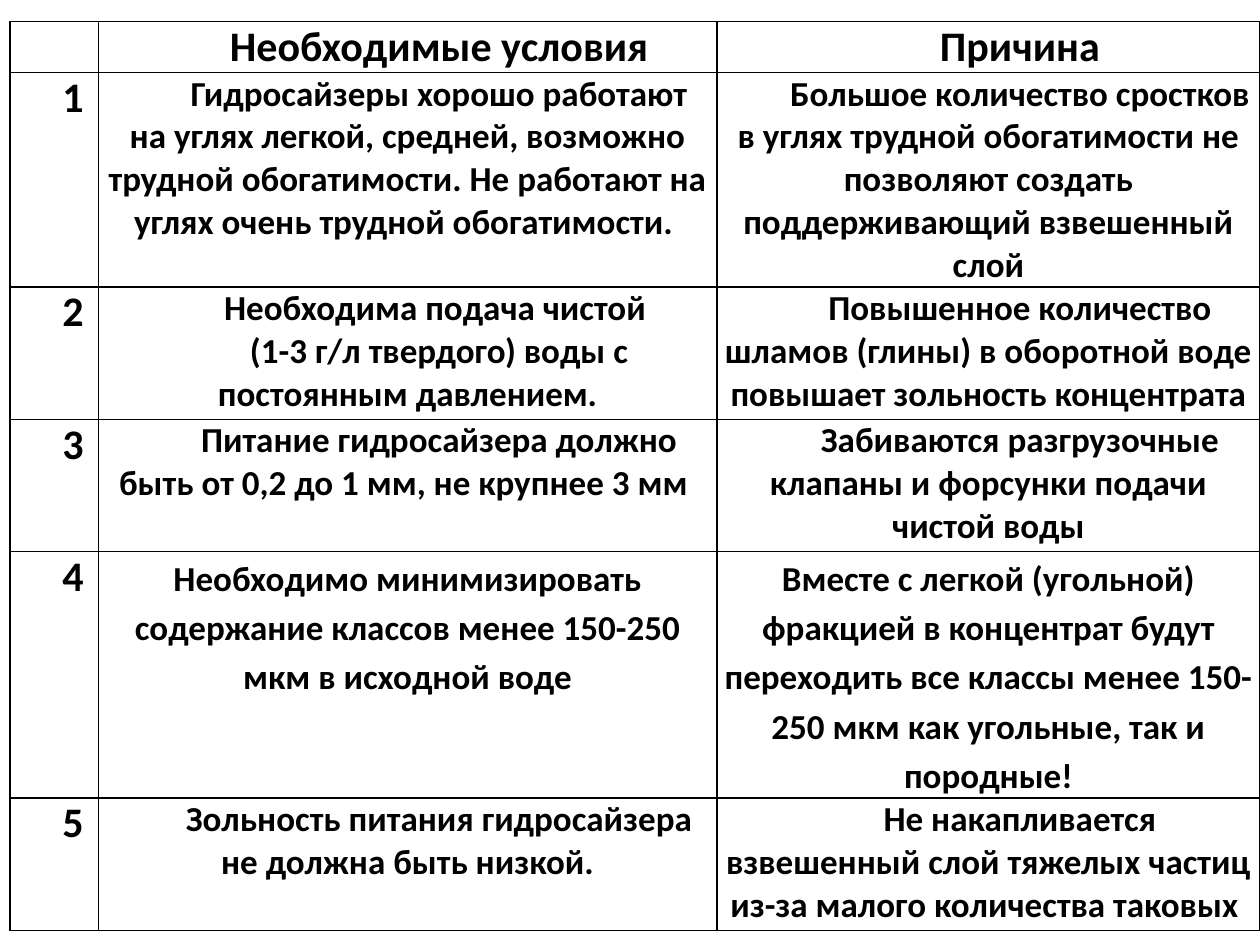
from lxml import etree
from pptx import Presentation
from pptx.dml.color import RGBColor
from pptx.enum.text import PP_ALIGN
from pptx.oxml.ns import qn
from pptx.util import Inches, Pt

CENTER = PP_ALIGN.CENTER
BLACK = RGBColor(0x00, 0x00, 0x00)
FONT = "Calibri"
LARGE, NORMAL = 24, 20
FIRST_LINE = 0.5
BORDER_WIDTH = 1
LEFT, TOP = 0.08, 0.17
COLUMN_WIDTHS = [0.7, 4.91, 4.31]
ROW_HEIGHTS = [0.27, 1.57, 1.05, 1.05, 1.51, 1.05]
TEXT_MARGINS = (0.06, 0.06)
NUMBER_MARGINS = (0, 0.39)
HEADINGS = ["", "Необходимые условия", "Причина"]
CONDITIONS = [
    ("Гидросайзеры хорошо работают на углях легкой, средней, возможно трудной "
     "обогатимости. Не работают на углях очень трудной обогатимости. ",
     "Большое количество сростков в углях трудной обогатимости не позволяют "
     "создать поддерживающий взвешенный слой"),
    ("Необходима подача чистой \n(1-3 г/л твердого) воды с постоянным давлением.",
     "Повышенное количество шламов (глины) в оборотной воде повышает зольность "
     "концентрата"),
    ("Питание гидросайзера должно быть от 0,2 до 1 мм, не крупнее 3 мм ",
     "Забиваются разгрузочные клапаны и форсунки подачи чистой воды"),
    ("Необходимо минимизировать содержание классов менее 150-250 мкм в исходной воде",
     "Вместе с легкой (угольной) фракцией в концентрат будут переходить все классы "
     "менее 150-250 мкм как угольные, так и породные!"),
    ("Зольность питания гидросайзера не должна быть низкой.",
     "Не накапливается взвешенный слой тяжелых частиц из-за малого количества "
     "таковых "),
]
LOOSE_ROW = 4


def set_borders(cell):
    """Draw a thin black line on every side of a cell."""
    properties = cell._tc.get_or_add_tcPr()
    for index, side in enumerate(("a:lnL", "a:lnR", "a:lnT", "a:lnB")):
        line = etree.Element(qn(side), w=str(Pt(BORDER_WIDTH)))
        fill = etree.SubElement(line, qn("a:solidFill"))
        etree.SubElement(fill, qn("a:srgbClr"), val=str(BLACK))
        properties.insert(index, line)


def write_text(cell, text, size=NORMAL, margins=TEXT_MARGINS,
               indent=FIRST_LINE, line_spacing=None):
    """Write bold centred text into a cell, one paragraph per line."""
    cell.margin_left, cell.margin_right = map(Inches, margins)
    cell.margin_top = cell.margin_bottom = 0
    cell.text = text
    for paragraph in cell.text_frame.paragraphs:
        paragraph.alignment = CENTER
        paragraph.line_spacing = line_spacing
        properties = paragraph._p.get_or_add_pPr()
        properties.set("marL", "0")
        properties.set("indent", str(Inches(indent)))
        font = paragraph.font
        for run in paragraph.runs:
            font = run.font
        font.name, font.size, font.bold = FONT, Pt(size), True
        font.color.rgb = BLACK


def add_grid(slide):
    """Add the empty bordered table and return it."""
    shape = slide.shapes.add_table(
        len(ROW_HEIGHTS), len(COLUMN_WIDTHS), Inches(LEFT), Inches(TOP),
        Inches(sum(COLUMN_WIDTHS)), Inches(sum(ROW_HEIGHTS)))
    table = shape.table
    table.first_row = table.horz_banding = False
    for column, width in zip(table.columns, COLUMN_WIDTHS):
        column.width = Inches(width)
    for row, height in zip(table.rows, ROW_HEIGHTS):
        row.height = Inches(height)
    for cell in table.iter_cells():
        cell.fill.background()
        set_borders(cell)
    return table


def fill_table(table):
    """Write the headings and the numbered conditions with their reasons."""
    for column, heading in enumerate(HEADINGS):
        write_text(table.cell(0, column), heading, size=LARGE)
    for row, texts in enumerate(CONDITIONS, start=1):
        write_text(table.cell(row, 0), str(row), size=LARGE, margins=NUMBER_MARGINS)
        layout = {"indent": 0, "line_spacing": 1.15} if row == LOOSE_ROW else {}
        for column, text in enumerate(texts, start=1):
            write_text(table.cell(row, column), text, **layout)


def main():
    """Build the slide and save it."""
    presentation = Presentation()
    presentation.slide_width, presentation.slide_height = Inches(10), Inches(7.5)
    slide = presentation.slides.add_slide(presentation.slide_layouts[6])
    fill_table(add_grid(slide))
    presentation.save("out.pptx")


if __name__ == "__main__":
    main()
